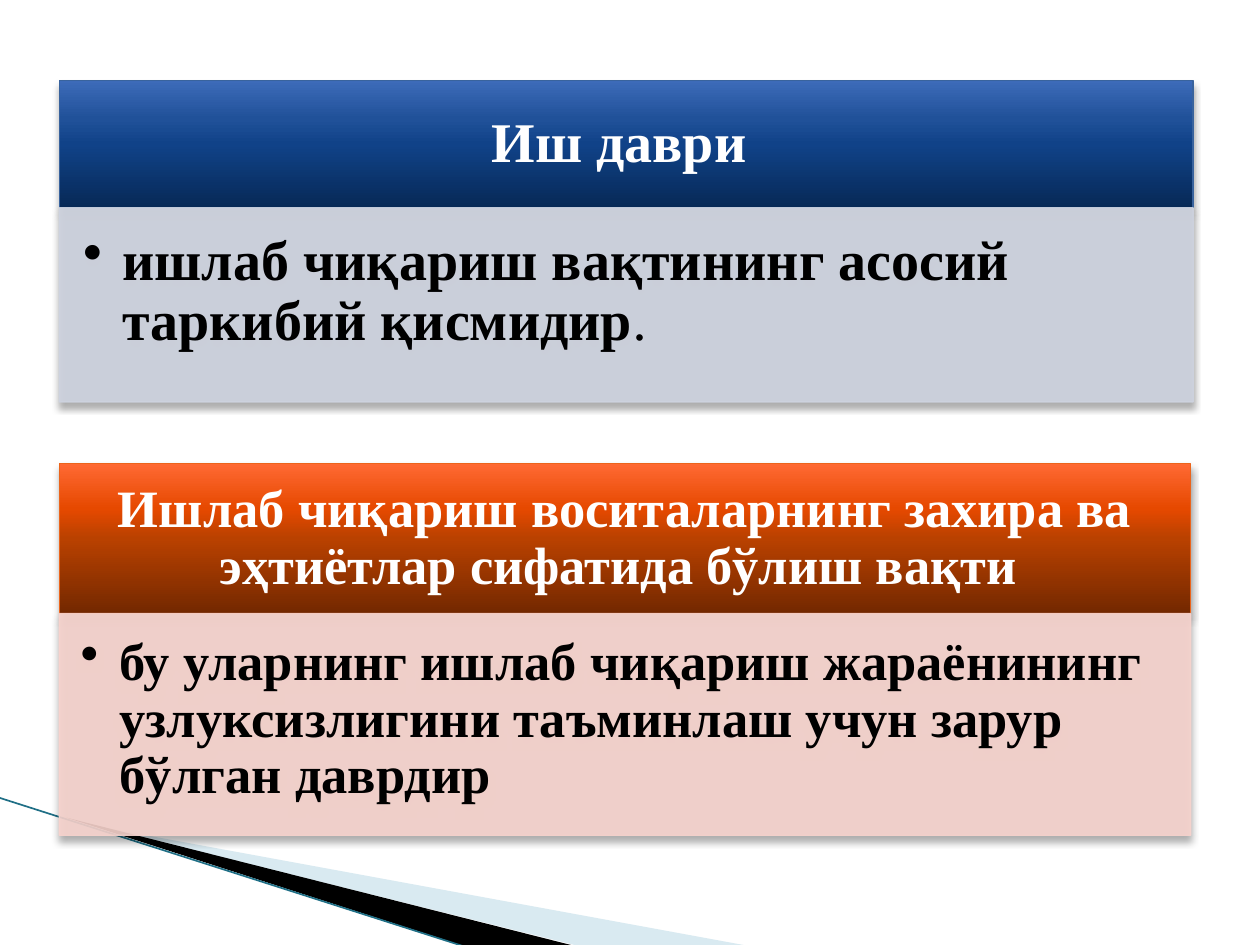
from lxml.etree import SubElement
from pptx import Presentation
from pptx.dml.color import RGBColor
from pptx.enum.shapes import MSO_CONNECTOR, MSO_SHAPE
from pptx.enum.text import MSO_ANCHOR, PP_ALIGN
from pptx.oxml.ns import qn
from pptx.util import Inches, Pt

BLACK = RGBColor(0, 0, 0)
WHITE = RGBColor(255, 255, 255)
TEAL = RGBColor(0x1F, 0x6F, 0x86)
SKY = RGBColor(0xA0, 0xCB, 0xDC)
BLUE_EDGE = RGBColor(0x39, 0x63, 0x9D)
BLUE_PALE = RGBColor(0xCE, 0xD3, 0xDF)
BLUES = [RGBColor(0x07, 0x29, 0x56), RGBColor(0x10, 0x42, 0x88),
         RGBColor(0x20, 0x51, 0x99), RGBColor(0x3D, 0x6B, 0xB9)]
RED_EDGE = RGBColor(0xEB, 0x64, 0x1B)
RED_PALE = RGBColor(0xF7, 0xD3, 0xCD)
REDS = [RGBColor(0x73, 0x28, 0x00), RGBColor(0xB9, 0x41, 0x00),
        RGBColor(0xE6, 0x49, 0x00), RGBColor(0xFF, 0x69, 0x33)]
STOPS = [0, 50, 70, 100]


def node(parent, tag, **attrs):
    return SubElement(parent, qn(tag), {k: str(v) for k, v in attrs.items()})


def fade(owner, share):
    """Make the solid fill of a shape or line part see-through."""
    color = owner.find(qn("a:solidFill"))[0]
    node(color, "a:alpha", val=share * 1000)


class Deck:
    """Places elements on a grid of 100 columns by 75 rows."""
    font = "Times New Roman"
    cols, rows = 100, 75

    def __init__(self):
        self.prs = Presentation()
        self.prs.slide_width, self.prs.slide_height = Inches(10), Inches(7.5)
        self.slide = self.prs.slides.add_slide(self.prs.slide_layouts[6])

    def x(self, col):
        return round(self.prs.slide_width * col / self.cols)

    def y(self, row):
        return round(self.prs.slide_height * row / self.rows)

    def wedge(self, points, color, alpha=100):
        spots = [(self.x(c), self.y(r)) for c, r in points]
        form = self.slide.shapes.build_freeform(*spots[0])
        form.add_line_segments(spots[1:], close=True)
        shape = form.convert_to_shape()
        shape.shadow.inherit = False
        shape.fill.solid()
        shape.fill.fore_color.rgb = color
        shape.line.fill.background()
        if alpha < 100:
            fade(shape._element.spPr, alpha)

    def line(self, start, end, color, width):
        wire = self.slide.shapes.add_connector(
            MSO_CONNECTOR.STRAIGHT, self.x(start[0]), self.y(start[1]),
            self.x(end[0]), self.y(end[1]))
        wire.line.color.rgb = color
        wire.line.width = Pt(width)
        node(wire._element.spPr, "a:effectLst")

    def box(self, left, top, width, height, edge):
        """Add a rectangle with a thin edge and a soft shadow below."""
        shape = self.slide.shapes.add_shape(
            MSO_SHAPE.RECTANGLE, self.x(left), self.y(top),
            self.x(width), self.y(height))
        shape.fill.solid()
        shape.fill.fore_color.rgb = edge
        shape.line.color.rgb = edge
        shape.line.width = Pt(0.75)
        shape.shadow.inherit = False
        effect = shape._element.spPr.find(qn("a:effectLst"))
        shade = node(effect, "a:outerShdw", blurRad=Pt(4), dist=Pt(3),
                     dir=90 * 60000, rotWithShape=0)
        tone = node(shade, "a:srgbClr", val=BLACK)
        node(tone, "a:alpha", val=35000)
        return shape

    def label(self, shape, parts, size, color, insets, align, anchor):
        frame = shape.text_frame
        frame.word_wrap = True
        frame.vertical_anchor = anchor
        (frame.margin_left, frame.margin_top, frame.margin_right,
         frame.margin_bottom) = [self.x(n) for n in insets]
        para = frame.paragraphs[0]
        para.alignment = align
        para.line_spacing = 0.9
        for text, bold in parts:
            run = para.add_run()
            run.text = text
            run.font.name, run.font.size = self.font, Pt(size)
            run.font.bold, run.font.color.rgb = bold, color
        return para

    def head(self, place, text, size, tones, edge, insets):
        shape = self.box(*place, edge)
        props = shape._element.spPr
        old = props.find(qn("a:solidFill"))
        grad = node(props, "a:gradFill", rotWithShape=1)
        stops = node(grad, "a:gsLst")
        for pos, tone in zip(STOPS, tones):
            node(node(stops, "a:gs", pos=pos * 1000), "a:srgbClr", val=tone)
        node(grad, "a:lin", ang=270 * 60000, scaled=0)
        props.replace(old, grad)
        self.label(shape, [(text, True)], size, WHITE, insets,
                   PP_ALIGN.CENTER, MSO_ANCHOR.MIDDLE)

    def body(self, place, parts, size, color, insets):
        shape = self.box(*place, color)
        fade(shape._element.spPr, 90)
        fade(shape._element.spPr.find(qn("a:ln")), 90)
        para = self.label(shape, parts, size, BLACK, insets,
                          PP_ALIGN.LEFT, MSO_ANCHOR.TOP)
        props = para._p.get_or_add_pPr()
        props.set("marL", str(self.x(3.1)))
        props.set("indent", str(-self.x(3.1)))
        node(props, "a:buChar", char="•")

    def save(self):
        self.prs.save("out.pptx")


def main():
    deck = Deck()
    deck.wedge([(7.8, 65.6), (59, 75), (45.6, 75)], SKY, 40)
    deck.wedge([(5.3, 64.9), (45.7, 75.1), (37.2, 75.2)], BLACK)
    deck.line((-0.1, 63.3), (37.1, 75.2), TEAL, 0.95)

    left = 4.7
    deck.head((left, 6.4, 90, 10.1), "Иш даври ", 32, BLUES, BLUE_EDGE,
              (2.5, 1.4, 2.5, 1.4))
    deck.body((left, 16.5, 90, 15.4),
              [("ишлаб чиқариш вақтининг асосий таркибий қисмидир", True),
               (".", False)],
              32, BLUE_PALE, (1.9, 1.9, 2.5, 2.8))
    deck.head((left, 36.8, 89.8, 11.9),
              "Ишлаб чиқариш воситаларнинг захира ва "
              "эҳтиётлар сифатида бўлиш вақти ",
              30, REDS, RED_EDGE, (2.3, 1.3, 2.3, 1.3))
    deck.body((left, 48.7, 89.8, 17.6),
              [("бу уларнинг ишлаб чиқариш жараёнининг узлуксизлигини "
                "таъминлаш учун зарур бўлган даврдир", True)],
              30, RED_PALE, (1.7, 1.7, 2.3, 2.6))
    deck.save()


if __name__ == "__main__":
    main()
